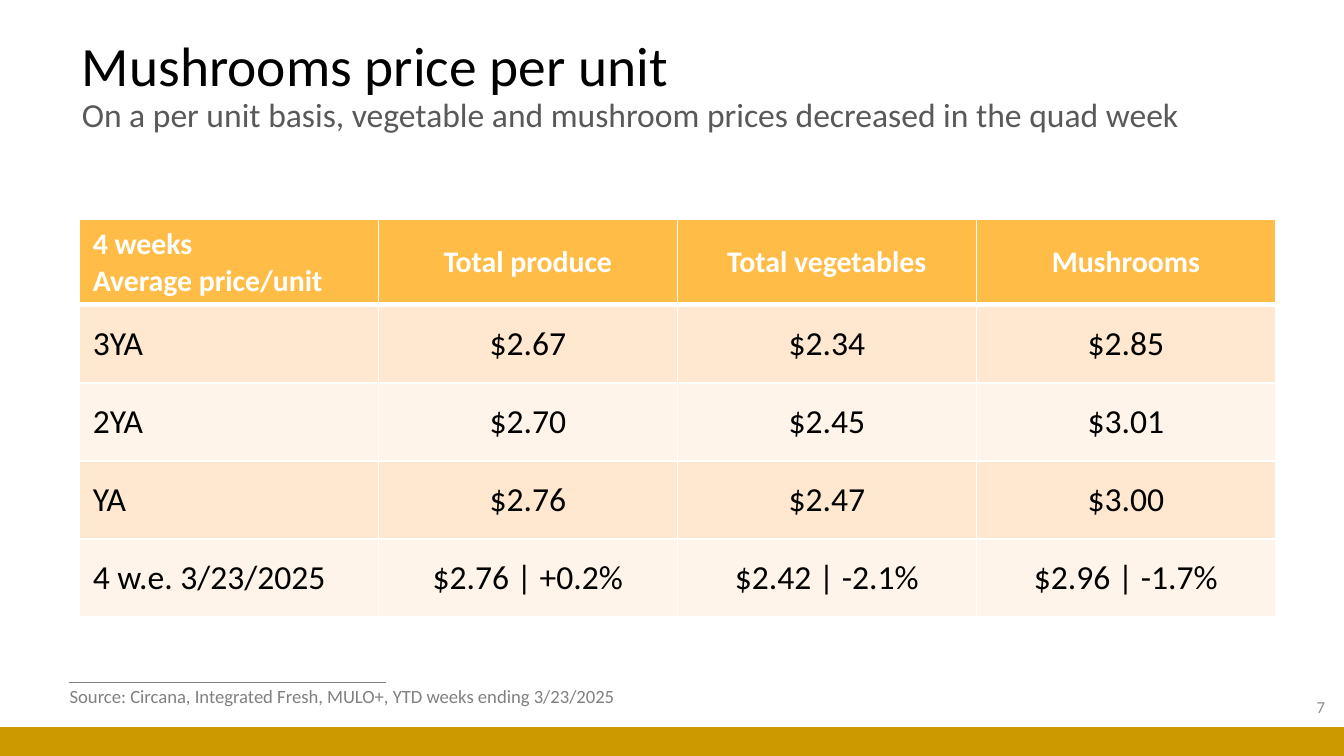
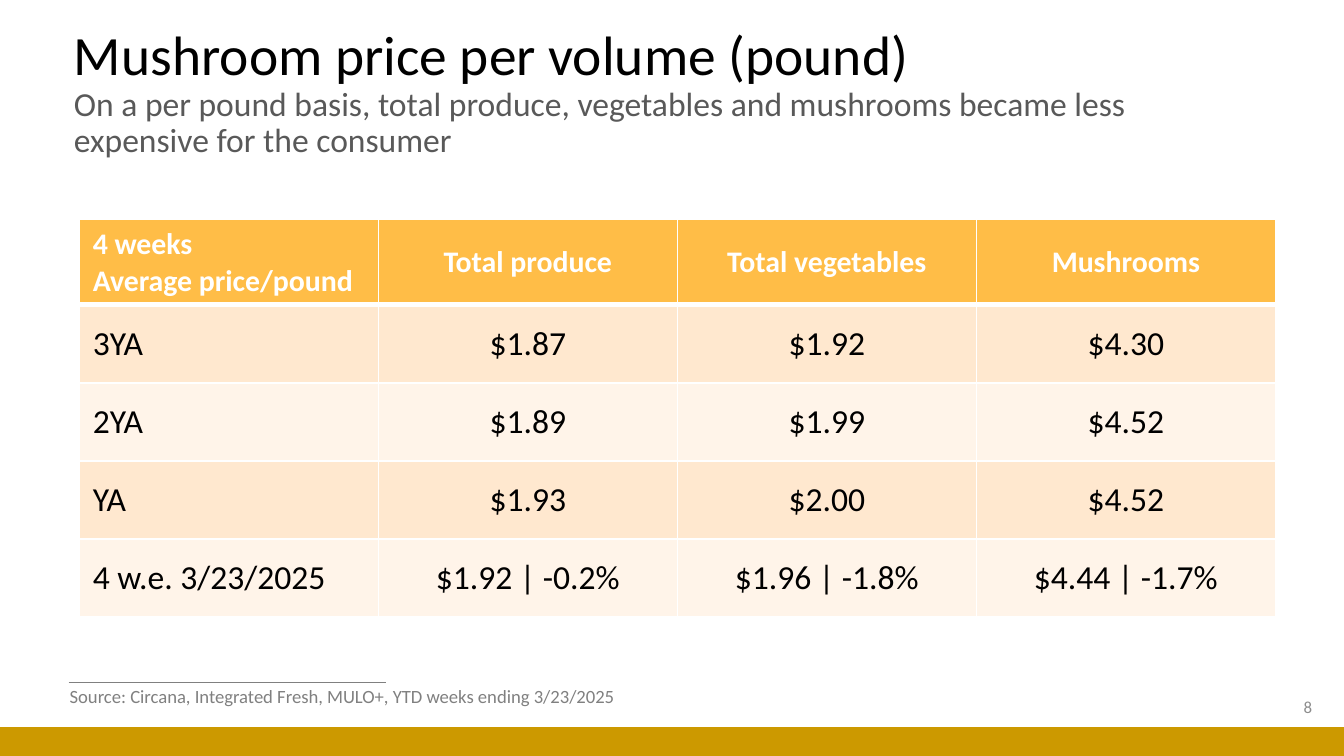
from dataclasses import dataclass

from lxml import etree
from pptx import Presentation
from pptx import util as u
from pptx.dml.color import RGBColor
from pptx.enum import shapes, text
from pptx.oxml import ns


@dataclass(frozen=True)
class Theme:
    font: str = "Calibri"
    title: tuple = (29.7, "000000")
    subtitle: tuple = (18, "595959")
    number: tuple = (9, "8C8C8C")
    source: tuple = (10, "808080")
    table_head: tuple = (16, "FFFFFF")
    table_body: tuple = (18, "000000")
    band: str = "CC9900"
    rule: str = "808080"
    head_fill: str = "FFBD47"
    row_fills: tuple = ("FFE8CF", "FFF4E9")
    border: str = "FFFFFF"


THEME = Theme()
SLIDE_SIZE = (720, 405)
TABLE_BOX = (42.5, 117.5, 640.8, 213)
SOURCE_BOX = (30.25, 363.5, 317.5, 19.5)
BAND_BOX = (0, 389.5, 720, 15.5)
RULE = (36.75, 365.75, 206.75, 365.75)
BODY_ROW_HEIGHT = 41.8
VALUE_MARGIN = 0.75
SOURCE = "Source: Circana, Integrated Fresh, MULO+, YTD weeks ending 3/23/2025"
PERIODS = ["3YA", "2YA", "YA", "4 w.e. 3/23/2025"]
PRODUCTS = ["Total produce", "Total vegetables", "Mushrooms"]
MIDDLE = text.MSO_ANCHOR.MIDDLE

PRICE_SLIDES = [
    {
        "title": "Mushrooms price per unit",
        "subtitle": "On a per unit basis, vegetable and mushroom prices decreased in the quad week",
        "title_box": (36.75, 26.75, 652.5, 39),
        "number": "7",
        "number_box": (555, 368, 162, 21.5),
        "measure": "Average price/unit",
        "prices": [
            ["$2.67", "$2.34", "$2.85"],
            ["$2.70", "$2.45", "$3.01"],
            ["$2.76", "$2.47", "$3.00"],
            ["$2.76 | +0.2%", "$2.42 | -2.1%", "$2.96 | -1.7%"],
        ],
    },
    {
        "title": "Mushroom price per volume (pound)",
        "subtitle": "On a per pound basis, total produce, vegetables and mushrooms "
                    "became less expensive for the consumer",
        "title_box": (32.5, 15.75, 629.25, 68.5),
        "number": "8",
        "number_box": (548, 368, 162, 21.5),
        "measure": "Average price/pound",
        "prices": [
            ["$1.87", "$1.92", "$4.30"],
            ["$1.89", "$1.99", "$4.52"],
            ["$1.93", "$2.00", "$4.52"],
            ["$1.92 | -0.2%", "$1.96 | -1.8%", "$4.44 | -1.7%"],
        ],
    },
]


def points(values):
    return [u.Pt(value) for value in values]


def color(value):
    return RGBColor.from_string(value)


def apply(target, formats):
    for name, value in formats.items():
        setattr(target, name, value)


def add_run(paragraph, words, style, bold=False):
    run = paragraph.add_run()
    run.text = words
    size, ink = style
    apply(run.font, {"name": THEME.font, "size": u.Pt(size), "bold": bold})
    run.font.color.rgb = color(ink)


def add_text_box(slide, box, **frame_formats):
    """Add an empty text box and return its frame."""
    frame = slide.shapes.add_textbox(*points(box)).text_frame
    apply(frame, {"word_wrap": True, **frame_formats})
    return frame


def add_title(slide, box, title, subtitle):
    paragraph = add_text_box(slide, box, vertical_anchor=MIDDLE).paragraphs[0]
    paragraph.line_spacing = 0.9
    add_run(paragraph, title, THEME.title)
    paragraph.add_line_break()
    add_run(paragraph, subtitle, THEME.subtitle)


def add_page_number(slide, box, number):
    paragraph = add_text_box(slide, box, vertical_anchor=MIDDLE).paragraphs[0]
    paragraph.alignment = text.PP_ALIGN.RIGHT
    add_run(paragraph, number, THEME.number)


def add_source(slide, box):
    frame = add_text_box(slide, box, word_wrap=False,
                         auto_size=text.MSO_AUTO_SIZE.SHAPE_TO_FIT_TEXT)
    add_run(frame.paragraphs[0], SOURCE, THEME.source)


def add_footer_art(slide):
    """Draw the thin rule above the source and the bottom band."""
    rule = slide.shapes.add_connector(shapes.MSO_CONNECTOR.STRAIGHT, *points(RULE))
    rule.line.width = u.Pt(0.5)
    rule.line.color.rgb = color(THEME.rule)
    etree.SubElement(rule._element.spPr, ns.qn("a:effectLst"))

    band = slide.shapes.add_shape(shapes.MSO_SHAPE.RECTANGLE, *points(BAND_BOX))
    band.shadow.inherit = False
    band.fill.solid()
    band.fill.fore_color.rgb = color(THEME.band)
    band.line.fill.background()


def set_borders(cell, widths):
    """Draw left, right, top and bottom borders with the given widths."""
    properties = cell._tc.get_or_add_tcPr()
    for side, width in zip("LRTB", widths):
        line = etree.SubElement(properties, ns.qn(f"a:ln{side}"), w=str(u.Pt(width)))
        fill = etree.SubElement(line, ns.qn("a:solidFill"))
        etree.SubElement(fill, ns.qn("a:srgbClr"), val=THEME.border)


def fill_cell(cell, lines, row, column):
    is_head = row == 0
    set_borders(cell, (1, 1, 3 if row == 1 else 1, 3 if is_head else 1))
    cell.fill.solid()
    cell.fill.fore_color.rgb = color(
        THEME.head_fill if is_head else THEME.row_fills[(row - 1) % 2])
    cell.vertical_anchor = MIDDLE
    if row and column:
        apply(cell, {"margin_left": u.Pt(VALUE_MARGIN), "margin_right": u.Pt(VALUE_MARGIN),
                     "margin_top": u.Pt(VALUE_MARGIN), "margin_bottom": 0})
    frame = cell.text_frame
    for index, words in enumerate(lines):
        paragraph = frame.add_paragraph() if index else frame.paragraphs[0]
        paragraph.alignment = text.PP_ALIGN.CENTER if column else text.PP_ALIGN.LEFT
        add_run(paragraph, words, THEME.table_head if is_head else THEME.table_body, is_head)


def add_price_table(slide, box, measure, prices):
    rows = [[["4 weeks", measure], *([product] for product in PRODUCTS)]]
    rows += [[[words] for words in (period, *values)]
             for period, values in zip(PERIODS, prices)]
    table = slide.shapes.add_table(len(rows), len(rows[0]), *points(box)).table
    for column in table.columns:
        column.width = u.Pt(box[2] / len(rows[0]))
    head_height = box[3] - len(PERIODS) * BODY_ROW_HEIGHT
    for row, cells in enumerate(rows):
        table.rows[row].height = u.Pt(BODY_ROW_HEIGHT if row else head_height)
        for column, lines in enumerate(cells):
            fill_cell(table.cell(row, column), lines, row, column)


def add_price_slide(presentation, content):
    slide = presentation.slides.add_slide(presentation.slide_layouts[6])
    add_footer_art(slide)
    add_title(slide, content["title_box"], content["title"], content["subtitle"])
    add_page_number(slide, content["number_box"], content["number"])
    add_source(slide, SOURCE_BOX)
    add_price_table(slide, TABLE_BOX, content["measure"], content["prices"])


def main():
    presentation = Presentation()
    presentation.slide_width, presentation.slide_height = points(SLIDE_SIZE)
    for content in PRICE_SLIDES:
        add_price_slide(presentation, content)
    presentation.save("out.pptx")


if __name__ == "__main__":
    main()
